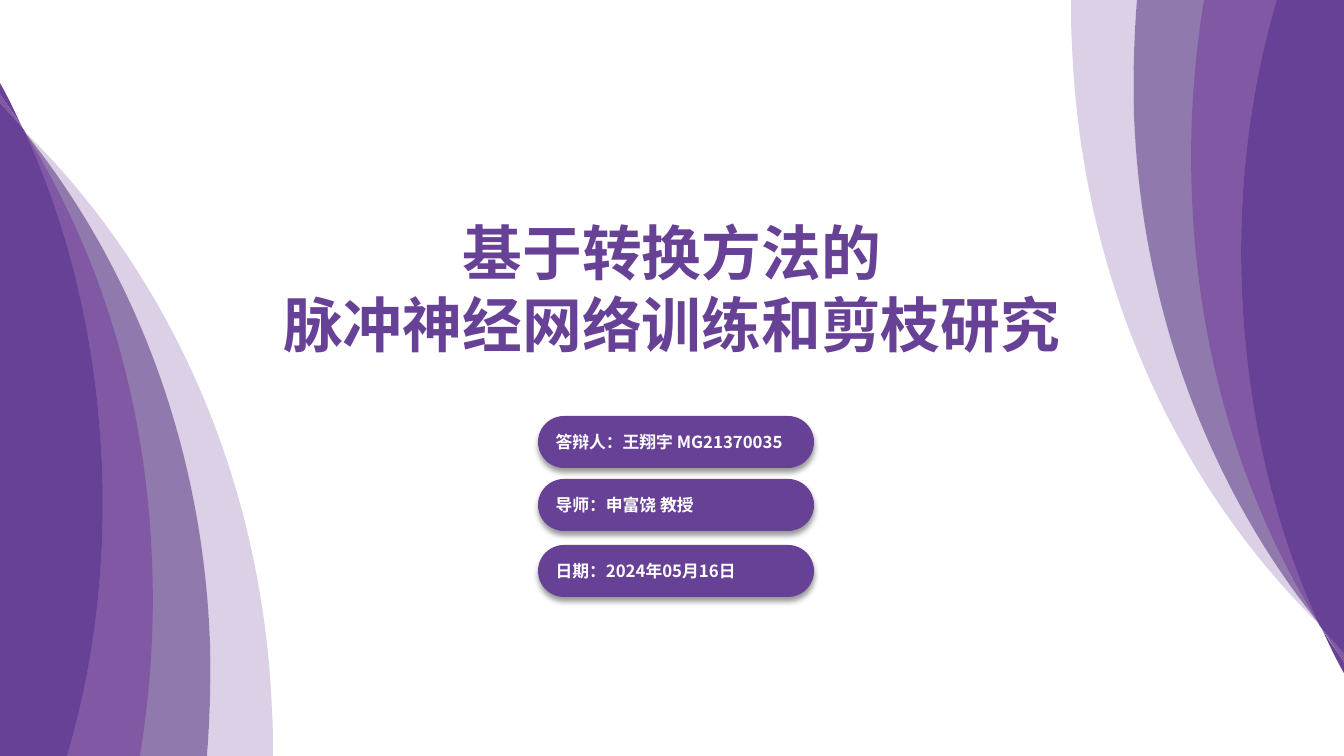
from lxml import etree
from pptx import Presentation
from pptx.dml.color import RGBColor
from pptx.enum.shapes import MSO_SHAPE
from pptx.enum.text import MSO_ANCHOR, PP_ALIGN
from pptx.oxml.ns import qn
from pptx.util import Emu, Pt

PX = 914400 / 100.8
WIDTH, HEIGHT = 1344, 756
FONT = "Noto Sans CJK SC"
DEEP, VIOLET, GREY, PALE, WHITE = "674196", "8058A3", "9079AD", "DBD0E6", "FFFFFF"

TITLE = ["基于转换方法的", "脉冲神经网络训练和剪枝研究"]
DETAILS = [
    ("答辩人：王翔宇 MG21370035", 416),
    ("导师：申富饶 教授", 479),
    ("日期：2024年05月16日", 545),
]
# Left-hand bands: colour, then steps; two numbers are a line, six a Bézier curve
BANDS = [
    (PALE, [(0, 109), (0, 756), (273, 756), (273, 741, 273, 726, 272, 711),
            (263, 478, 168, 272, 25, 132), (26, 134),
            (133, 268, 202, 446, 210, 642), (211, 680, 210, 718, 207, 756), (0, 756)]),
    (GREY, [(207, 756), (210, 718, 211, 680, 210, 642),
            (202, 429, 122, 240, 0, 103), (0, 756)]),
    ("DDE3E5", [(22, 127), (24, 131), (25, 132)]),
    ("D0D6D8", [(24, 131), (26, 134), (25, 132)]),
    (VIOLET, [(0, 103), (0, 756), (140, 756), (150, 694, 155, 628, 152, 560),
              (146, 401, 101, 255, 26, 134), (24, 130),
              (70, 231, 97, 345, 102, 466), (106, 567, 94, 665, 67, 756), (0, 756)]),
    (DEEP, [(0, 83), (0, 94), (7, 105, 15, 115, 22, 127), (15, 112, 8, 97, 0, 83)]),
    (VIOLET, [(0, 94), (0, 103), (8, 112, 16, 121, 24, 131), (22, 127)]),
    (DEEP, [(0, 103), (0, 756), (67, 756), (94, 665, 106, 567, 102, 466),
            (97, 345, 70, 230, 24, 130), (16, 121, 8, 112, 0, 103)]),
]


def px(length):
    return Emu(round(length * PX))


def color(value):
    return RGBColor.from_string(value)


def place(step, turned):
    pairs = zip(step[::2], step[1::2])
    return [(px(WIDTH - x), px(HEIGHT - y)) if turned else (px(x), px(y)) for x, y in pairs]


def add_band(steps, turned):
    placed = [place(step, turned) for step in steps]
    builder = shapes.build_freeform(*placed[0][0])
    builder.add_line_segments([points[-1] for points in placed[1:]], close=True)
    band = builder.convert_to_shape()
    # Bend the straight segments that have control points
    segments = list(band._element.iter(qn("a:lnTo")))
    for segment, points in zip(segments, placed[1:]):
        if len(points) == 3:
            segment.tag = qn("a:cubicBezTo")
            segment.clear()
            for x, y in points:
                etree.SubElement(segment, qn("a:pt"), x=str(x - band.left), y=str(y - band.top))
    return band


def paint(shape, fill):
    shape.fill.solid()
    shape.fill.fore_color.rgb = color(fill)
    shape.line.fill.background()
    shape.shadow.inherit = False


def style(paragraph, size, text_color, align):
    paragraph.alignment = align
    for run in paragraph.runs:
        run.font.size, run.font.bold, run.font.name = Pt(size), True, FONT
        run.font.color.rgb = color(text_color)
        etree.SubElement(run.font._element, qn("a:ea"), typeface=FONT)


def drop_shadow(shape):
    effects = shape._element.spPr.find(qn("a:effectLst"))
    shadow = etree.SubElement(effects, qn("a:outerShdw"), blurRad=str(Pt(4)),
                              dist=str(Pt(3)), dir="5400000", algn="t", rotWithShape="0")
    black = etree.SubElement(shadow, qn("a:srgbClr"), val="000000")
    etree.SubElement(black, qn("a:alpha"), val="40000")


prs = Presentation()
prs.slide_width, prs.slide_height = px(WIDTH), px(HEIGHT)
slide = prs.slides.add_slide(prs.slide_layouts[6])
shapes = slide.shapes

# Curved bands: bottom left, then turned half round to the top right
for turned in (False, True):
    for fill, steps in BANDS:
        paint(add_band(steps, turned), fill)

# Title
title = shapes.add_textbox(px(270), px(211), px(804), px(155)).text_frame
title.word_wrap = False
title.margin_top = px(4)
title.text = "\n".join(TITLE)
for line in title.paragraphs:
    line.line_spacing = Pt(51.5)
    style(line, 42.7, DEEP, PP_ALIGN.CENTER)

# Candidate, supervisor and date
for detail, top in DETAILS:
    pill = shapes.add_shape(MSO_SHAPE.ROUNDED_RECTANGLE, px(538), px(top), px(276), px(52))
    pill.adjustments[0] = 0.5
    paint(pill, DEEP)
    drop_shadow(pill)
    pill.text_frame.text = detail
    pill.text_frame.word_wrap = True
    pill.text_frame.vertical_anchor = MSO_ANCHOR.MIDDLE
    style(pill.text_frame.paragraphs[0], 12, WHITE, PP_ALIGN.LEFT)

prs.save("out.pptx")
